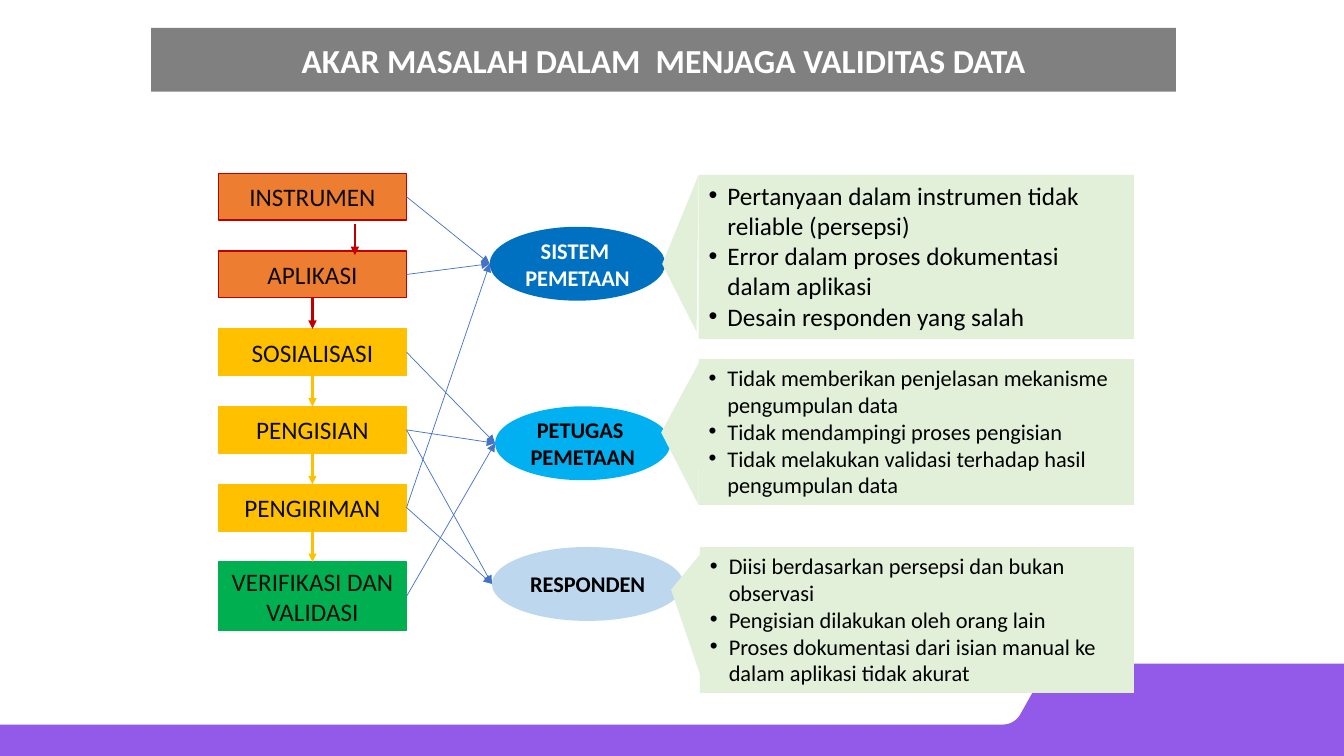
from lxml import etree
from pptx import Presentation
from pptx import util as u
from pptx.dml.color import RGBColor
from pptx.enum import shapes, text
from pptx.oxml.ns import qn

Pt = u.Pt
KIND = shapes.MSO_SHAPE
MID = text.MSO_ANCHOR.MIDDLE
TOP = text.MSO_ANCHOR.TOP
MAIN = text.PP_ALIGN.CENTER
LEFT = text.PP_ALIGN.LEFT

HUE = {
    "purple": "935AE9", "gray": "808080", "orange": "ED7D31", "red": "C00000",
    "gold": "FFC000", "green": "00B050", "navy": "0070C0", "sky": "00B0F0",
    "pale": "BDD7EE", "mint": "E2F0D9", "link": "4472C4",
    "ink": "0D0D0D", "black": "000000", "white": "FFFFFF",
}

STEP_X, STEP_Y, STEP_W, STEP_H, PITCH = 156, 123.9, 134.4, 33.3, 55.5
STEPS = [  # label, fill, line, height
    ("INSTRUMEN", "orange", "red", STEP_H),
    ("APLIKASI", "orange", "red", STEP_H),
    ("SOSIALISASI", "gold", "gold", STEP_H),
    ("PENGISIAN", "gold", "gold", STEP_H),
    ("PENGIRIMAN", "gold", "gold", STEP_H),
    ("VERIFIKASI DAN VALIDASI", "green", "green", 49.2),
]

CAUSE_H = 52.8
CAUSES = [  # lines, left, top, width, fill, ink, linked steps
    (["SISTEM ", "PEMETAAN"], 349.8, 162, 125.4, "navy", "white", [0, 1, 4]),
    (["PETUGAS ", "PEMETAAN"], 353.6, 290.2, 125.4, "sky", "black", [2, 3, 5]),
    (["RESPONDEN"], 351.4, 390.7, 136.8, "pale", "black", [3, 4]),
]

PANELS = [  # box, text size, pointer corners, items
    ((499, 125, 311, 117), 18, [(473, 188.6), (499, 125), (497.6, 237)],
     ["Pertanyaan dalam instrumen tidak reliable (persepsi)",
      "Error dalam proses dokumentasi dalam aplikasi",
      "Desain responden yang salah"]),
    ((499, 256.5, 311, 104.2), 16, [(472.3, 309), (499.5, 258.5), (499, 360.7)],
     ["Tidak memberikan penjelasan mekanisme pengumpulan data",
      "Tidak mendampingi proses pengisian",
      "Tidak melakukan validasi terhadap hasil pengumpulan data"]),
    ((500, 390.8, 310, 104.2), 16, [(479.4, 421.2), (501.3, 394.3), (500.6, 483.4)],
     ["Diisi berdasarkan persepsi dan bukan observasi",
      "Pengisian dilakukan oleh orang lain",
      "Proses dokumentasi dari isian manual ke dalam aplikasi tidak akurat"]),
]


def color(name):
    return RGBColor.from_string(HUE[name])


def paint(shape, fill, line=None):
    shape.shadow.inherit = False
    shape.fill.solid()
    shape.fill.fore_color.rgb = color(fill)
    if line:
        shape.line.color.rgb = color(line)
        shape.line.width = Pt(1)
    else:
        shape.line.fill.background()


def bullet(para):
    props = para._p.get_or_add_pPr()
    props.set("marL", str(Pt(13.5)))
    props.set("indent", str(-Pt(13.5)))
    etree.SubElement(props, qn("a:buFont")).set("typeface", "Arial")
    etree.SubElement(props, qn("a:buChar")).set("char", "•")


def write(shape, lines, size, ink, bold=False, list_style=False, wrap=True):
    frame = shape.text_frame
    frame.word_wrap = wrap
    frame.vertical_anchor = TOP if list_style else MID
    for i, line in enumerate(lines):
        para = frame.paragraphs[0] if i == 0 else frame.add_paragraph()
        para.text = line
        para.alignment = LEFT if list_style else MAIN
        if list_style:
            bullet(para)
        font = para.font
        font.name, font.size, font.bold = "Calibri", Pt(size), bold
        font.color.rgb = color(ink)


def block(slide, kind, box, fill, line=None):
    shape = slide.shapes.add_shape(kind, *map(Pt, box))
    paint(shape, fill, line)
    return shape


def outline(slide, points, fill):
    """Draw a closed, filled polygon through the points."""
    first, *rest = [(Pt(x), Pt(y)) for x, y in points]
    pen = slide.shapes.build_freeform(*first)
    pen.add_line_segments(rest, close=True)
    paint(pen.convert_to_shape(), fill)


def curve(a, b, c, d, count=10):
    """Return points along a cubic Bezier curve."""
    result = []
    for i in range(count + 1):
        t = i / count
        s = 1 - t
        result.append(tuple(
            s**3 * p + 3 * s * s * t * q + 3 * s * t * t * r + t**3 * v
            for p, q, r, v in zip(a, b, c, d)))
    return result


def arrow(slide, start, end, hue, width):
    line = slide.shapes.add_connector(
        shapes.MSO_CONNECTOR.STRAIGHT, *map(Pt, (*start, *end)))
    line.line.color.rgb = color(hue)
    line.line.width = Pt(width)
    etree.SubElement(line.line._get_or_add_ln(), qn("a:tailEnd")).set("type", "triangle")
    etree.SubElement(line._element.spPr, qn("a:effectLst"))


def footer(slide):
    upper = curve((759.6, 474), (753.2, 474), (747.4, 477.4), (744.3, 482.6))
    lower = curve((728.8, 510.3), (726.2, 514.8), (721.4, 517.6), (716.2, 517.6))
    outline(slide, upper + lower + [(0, 517.6), (0, 540), (960, 540), (960, 474)],
            "purple")


def flow(slide):
    mid = STEP_X + STEP_W / 2
    for i, (label, fill, line, high) in enumerate(STEPS):
        top = STEP_Y + i * PITCH
        box = block(slide, KIND.RECTANGLE, (STEP_X, top, STEP_W, high), fill, line)
        write(box, [label], 18, "ink")
    for i, step in enumerate(STEPS[:-1]):
        low = STEP_Y + i * PITCH + STEP_H
        x, drop = (253.5, 2.8) if i == 0 else (mid, 0)
        arrow(slide, (x, low + drop), (x, low + drop + PITCH - STEP_H), step[2], 1.5)


def causes(slide):
    for lines, left, top, wide, fill, ink, linked in CAUSES:
        oval = block(slide, KIND.OVAL, (left, top, wide, CAUSE_H), fill)
        write(oval, lines, 16, ink, bold=True, wrap=False)
        for i in linked:
            y = STEP_Y + i * PITCH + STEPS[i][3] / 2
            arrow(slide, (STEP_X + STEP_W, y), (left, top + CAUSE_H / 2), "link", 0.5)


def panels(slide):
    for box, size, points, items in PANELS:
        panel = block(slide, KIND.RECTANGLE, box, "mint")
        write(panel, items, size, "black", list_style=True)
        outline(slide, points, "mint")


def main():
    deck = Presentation()
    deck.slide_width, deck.slide_height = Pt(960), Pt(540)
    slide = deck.slides.add_slide(deck.slide_layouts[6])
    footer(slide)
    flow(slide)
    causes(slide)
    panels(slide)
    title = block(slide, KIND.RECTANGLE, (108, 20, 732, 45.4), "gray")
    write(title, ["AKAR MASALAH DALAM  MENJAGA VALIDITAS DATA"], 24, "white", bold=True)
    deck.save("out.pptx")


if __name__ == "__main__":
    main()
